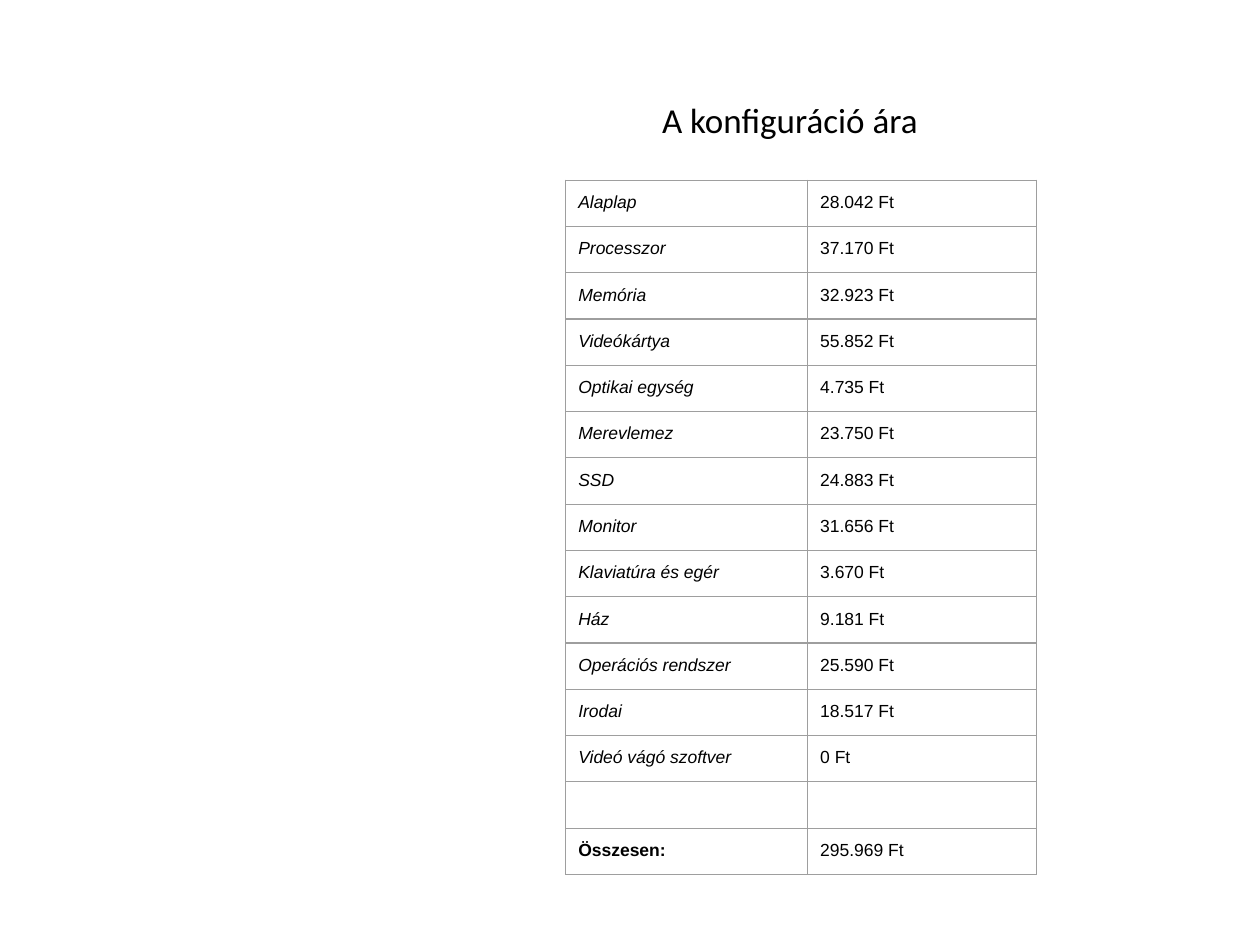
from typing import NamedTuple

from lxml.etree import SubElement
from pptx import Presentation
from pptx.dml.color import RGBColor as Rgb
from pptx.enum.text import PP_ALIGN as Align
from pptx.oxml.ns import qn
from pptx.util import Emu, Pt

PX = 9144
INSET = 10
ROW_HEIGHT = 35
COLUMN_WIDTHS = (192, 182)
COLORS = {"text": "000000", "border": "9E9E9E"}


class PriceRow(NamedTuple):
    item: str
    price: str
    total: bool = False


PRICES = [
    PriceRow("Alaplap", "28.042 Ft"),
    PriceRow("Processzor", "37.170 Ft"),
    PriceRow("Memória", "32.923 Ft"),
    PriceRow("Videókártya", "55.852 Ft"),
    PriceRow("Optikai egység", "4.735 Ft"),
    PriceRow("Merevlemez", "23.750 Ft"),
    PriceRow("SSD", "24.883 Ft"),
    PriceRow("Monitor", "31.656 Ft"),
    PriceRow("Klaviatúra és egér", "3.670 Ft"),
    PriceRow("Ház", "9.181 Ft"),
    PriceRow("Operációs rendszer", "25.590 Ft"),
    PriceRow("Irodai", "18.517 Ft"),
    PriceRow("Videó vágó szoftver", "0 Ft"),
    PriceRow("", ""),
    PriceRow("Összesen:", "295.969 Ft", total=True),
]


def px(length: int) -> Emu:
    return Emu(length * PX)


def write(holder, text: str, *, size: int = 10, font: str = "Arial", italic: bool = False,
          bold: bool = False, align: Align = Align.LEFT) -> None:
    holder.margin_left = holder.margin_right = px(INSET)
    holder.margin_top = holder.margin_bottom = px(INSET)
    paragraph = holder.text_frame.paragraphs[0] if hasattr(holder, "text_frame") else holder.paragraphs[0]
    paragraph.alignment = align
    if not text:
        paragraph._p.get_or_add_endParaRPr().set("sz", str(size * 100))
        return
    run = paragraph.add_run()
    run.text = text
    run.font.size = Pt(size)
    run.font.name = font
    run.font.italic = italic
    run.font.bold = bold
    run.font.color.rgb = Rgb.from_string(COLORS["text"])


def outline(cell) -> None:
    properties = cell._tc.get_or_add_tcPr()
    for side in ("lnL", "lnR", "lnT", "lnB"):
        line = SubElement(properties, qn(f"a:{side}"), w=str(Pt(0.75)))
        fill = SubElement(line, qn("a:solidFill"))
        SubElement(fill, qn("a:srgbClr"), val=COLORS["border"])


def draw_title(slide, text: str) -> None:
    title = slide.shapes.add_textbox(px(435), px(68), px(384), px(69)).text_frame
    title.word_wrap = True
    write(title, text, size=20, font="Calibri", align=Align.CENTER)


def draw_prices(slide, prices: list[PriceRow]) -> None:
    table = slide.shapes.add_table(len(prices), len(COLUMN_WIDTHS), px(449), px(143),
                                   px(sum(COLUMN_WIDTHS)), px(ROW_HEIGHT * len(prices))).table
    table.first_row = table.horz_banding = False
    for column, width in zip(table.columns, COLUMN_WIDTHS):
        column.width = px(width)
    for row, entry in zip(table.rows, prices):
        row.height = px(ROW_HEIGHT)
        item, price = row.cells
        write(item, entry.item, italic=not entry.total, bold=entry.total)
        write(price, entry.price)
        for cell in (item, price):
            outline(cell)
            cell.fill.background()


def main() -> None:
    deck = Presentation()
    deck.slide_width, deck.slide_height = px(1000), px(750)
    slide = deck.slides.add_slide(deck.slide_layouts[6])
    draw_title(slide, "A konfiguráció ára")
    draw_prices(slide, PRICES)
    deck.save("out.pptx")


if __name__ == "__main__":
    main()
